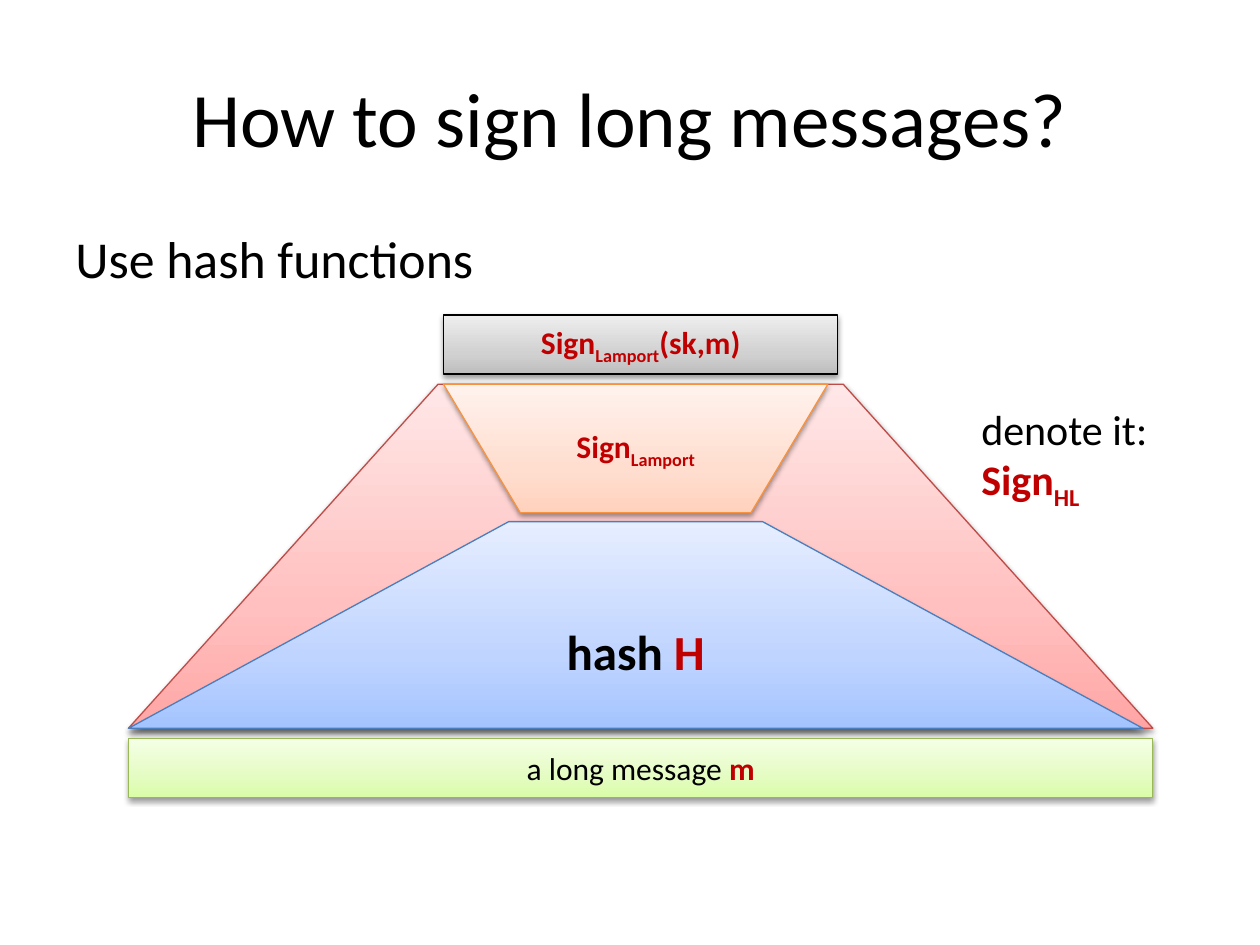
import dataclasses

import lxml.etree
import pptx
import pptx.dml.color
import pptx.enum.shapes
import pptx.enum.text
import pptx.oxml
import pptx.oxml.ns
import pptx.util

SCALE = 9144
KIND = pptx.enum.shapes.MSO_SHAPE
ALIGN = pptx.enum.text.PP_ALIGN
ANCHOR = pptx.enum.text.MSO_ANCHOR
FIT = pptx.enum.text.MSO_AUTO_SIZE


@dataclasses.dataclass(frozen=True)
class Theme:
    font: str = "Calibri"
    ink: str = "000000"
    key: str = "C00000"
    rose: tuple = ("BF4C48", "FFA6A5", "FFC0BF", "FFE7E7")
    blue: tuple = ("4B7EBC", "A4C4FF", "BFD4FF", "E6EEFF")
    peach: tuple = ("F69240", "FFD2BD", "FFDED0", "FFF2ED")
    lime: tuple = ("98B955", "DAFDA7", "E4FCC2", "F5FFE7")
    gray: tuple = ("000000", "BDBDBD", "D1D1D1", "EEEEEE")
    head: float = 44
    body: float = 29.6
    hash: float = 28
    note: float = 24
    label: float = 18


def px(*nums):
    return [pptx.util.Emu(num * SCALE) for num in nums]


def rgb(code):
    return pptx.dml.color.RGBColor.from_string(code)


def write(frame, lines, theme, size, align=ALIGN.LEFT, anchor=ANCHOR.TOP, wrap=True):
    frame.word_wrap = wrap
    frame.vertical_anchor = anchor
    for i, line in enumerate(lines):
        para = frame.add_paragraph() if i else frame.paragraphs[0]
        para.alignment = align
        for words, look in line:
            run = para.add_run()
            run.text = words
            font = run.font
            font.name = theme.font
            font.size = pptx.util.Pt(size)
            font.bold = "b" in look
            font.color.rgb = rgb(theme.key if "k" in look else theme.ink)
            if "s" in look:
                run._r.get_or_add_rPr().set("baseline", "-25000")


@dataclasses.dataclass
class Deck:
    theme: Theme
    slide: object

    def text(self, box, lines, size, grow=False, **form):
        frame = self.slide.shapes.add_textbox(*px(*box)).text_frame
        write(frame, lines, self.theme, size, **form)
        frame.auto_size = FIT.SHAPE_TO_FIT_TEXT if grow else FIT.NONE

    def block(self, kind, box, tone, runs=(), size=None, slant=None):
        shape = self.slide.shapes.add_shape(kind, *px(*box))
        if slant:
            shape.adjustments[0] = slant
        edge, *shades = tone
        shape.line.color.rgb = rgb(edge)
        shape.line.width = pptx.util.Pt(0.75)
        self.blend(shape, shades)
        self.shade(shape)
        if runs:
            write(shape.text_frame, [runs], self.theme, size,
                  align=ALIGN.CENTER, anchor=ANCHOR.MIDDLE)

    def blend(self, shape, shades):
        shape.fill.gradient()
        shape.fill.gradient_angle = 90
        stops = shape._element.spPr.find(".//" + pptx.oxml.ns.qn("a:gsLst"))
        for old in list(stops):
            stops.remove(old)
        for spot, code in zip((0, 35, 100), shades):
            stop = lxml.etree.SubElement(stops, pptx.oxml.ns.qn("a:gs"), pos=str(spot * 1000))
            lxml.etree.SubElement(stop, pptx.oxml.ns.qn("a:srgbClr"), val=code)

    def shade(self, shape):
        shape.shadow.inherit = False
        effects = shape._element.spPr.find(pptx.oxml.ns.qn("a:effectLst"))
        effects.append(pptx.oxml.parse_xml(
            f'<a:outerShdw {pptx.oxml.ns.nsdecls("a")} blurRad="40000" dist="20000" '
            f'dir="5400000" rotWithShape="0"><a:srgbClr val="{self.theme.ink}">'
            '<a:alpha val="38000"/></a:srgbClr></a:outerShdw>'))


def main():
    show = pptx.Presentation()
    show.slide_width, show.slide_height = px(1000, 750)
    theme = Theme()
    deck = Deck(theme, show.slides.add_slide(show.slide_layouts[6]))
    sign = [("Sign", "bk"), ("Lamport", "bks")]

    deck.block(KIND.TRAPEZOID, (102, 305, 813, 273), theme.rose, slant=0.9)
    deck.text((50, 30, 900, 125), [[("How to sign long messages?", "")]], theme.head,
              align=ALIGN.CENTER, anchor=ANCHOR.MIDDLE)
    deck.text((50, 175, 900, 52), [[("Use hash functions", "")]], theme.body)
    deck.block(KIND.TRAPEZOID, (102, 414, 805, 164), theme.blue,
               [("hash ", "b"), ("H", "bk")], theme.hash, slant=1.84)
    deck.block(KIND.FLOWCHART_MANUAL_OPERATION, (352, 305, 305, 102), theme.peach,
               sign, theme.label)
    deck.block(KIND.RECTANGLE, (102, 586, 813, 47), theme.lime,
               [("a long message ", ""), ("m", "bk")], theme.label)
    deck.block(KIND.RECTANGLE, (352, 250, 313, 47), theme.gray,
               sign + [("(sk,m)", "bk")], theme.label)
    deck.text((769, 315, 153, 91), [[("denote it:", "")], [("Sign", "bk"), ("HL", "bks")]],
              theme.note, grow=True, wrap=False)
    show.save("out.pptx")


if __name__ == "__main__":
    main()
